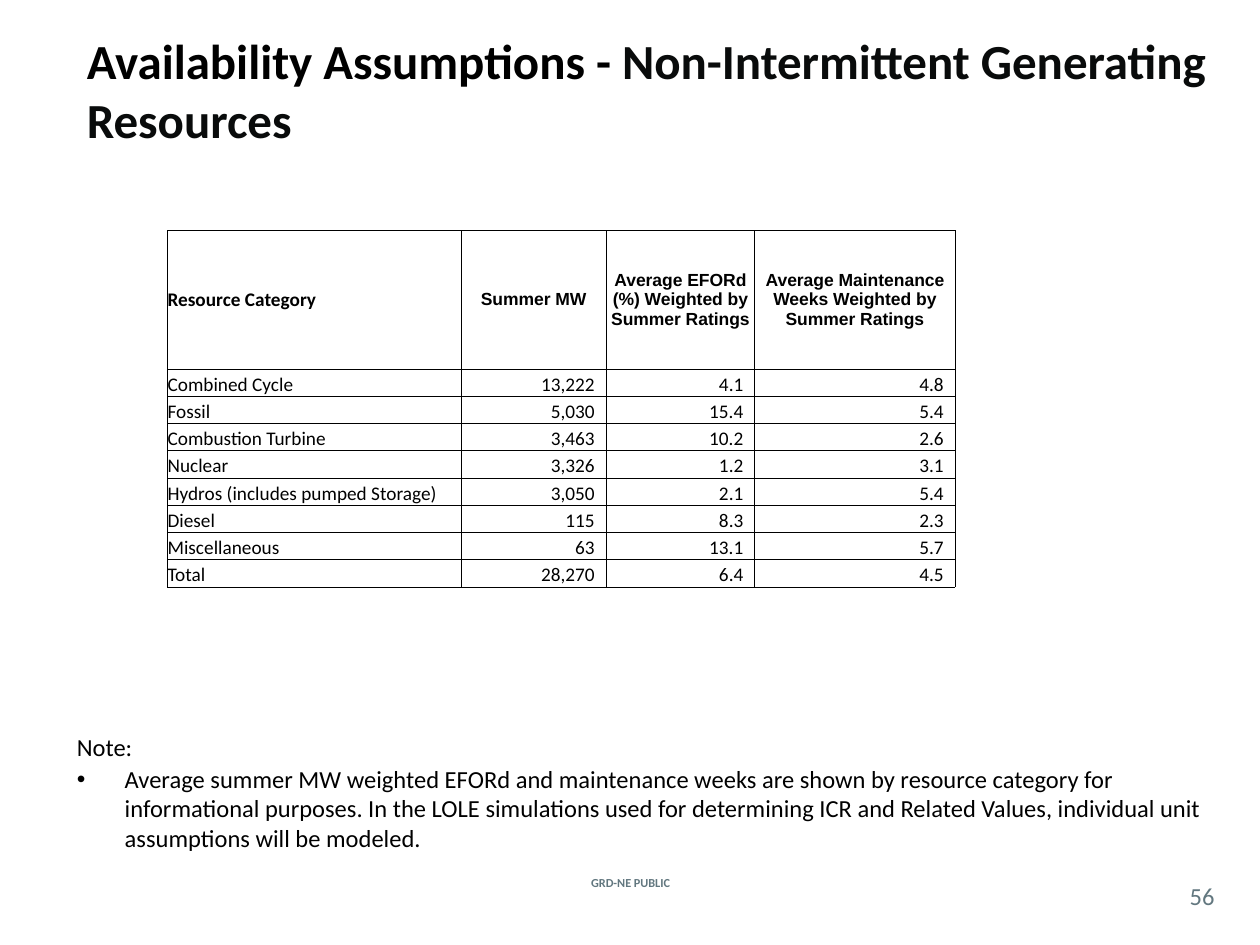
from lxml import etree
from pptx import Presentation
from pptx import util as u
from pptx.dml.color import RGBColor
from pptx.enum import text
from pptx.oxml import ns

BLACK = RGBColor(0x00, 0x00, 0x00)
INK = RGBColor(0x09, 0x0B, 0x0B)
SLATE = RGBColor(0x62, 0x77, 0x7F)

# Grid of 100 columns by 75 rows; every cell is a square.
COLUMNS, ROWS = 100, 75
WIDTH, HEIGHT = u.Inches(10), u.Inches(7.5)
UNIT = WIDTH / COLUMNS

LEFT, CENTER, RIGHT = text.PP_ALIGN.LEFT, text.PP_ALIGN.CENTER, text.PP_ALIGN.RIGHT
TOP, MIDDLE, BOTTOM = (text.MSO_ANCHOR.TOP, text.MSO_ANCHOR.MIDDLE,
                       text.MSO_ANCHOR.BOTTOM)

HEADINGS = ["Resource Category", "Summer MW",
            "Average EFORd (%) Weighted by Summer Ratings",
            "Average Maintenance Weeks Weighted by Summer Ratings"]
RESOURCES = [
    ["Combined Cycle", "13,222", "4.1", "4.8"],
    ["Fossil", "5,030", "15.4", "5.4"],
    ["Combustion Turbine", "3,463", "10.2", "2.6"],
    ["Nuclear", "3,326", "1.2", "3.1"],
    ["Hydros (includes pumped Storage)", "3,050", "2.1", "5.4"],
    ["Diesel", "115", "8.3", "2.3"],
    ["Miscellaneous", "63", "13.1", "5.7"],
    ["Total", "28,270", "6.4", "4.5"],
]
NOTE = ("Average summer MW weighted EFORd and maintenance weeks are shown by "
        "resource category for informational purposes. In the LOLE simulations "
        "used for determining ICR and Related Values, individual unit "
        "assumptions will be modeled.")


def grid(*counts):
    return [u.Emu(round(count * UNIT)) for count in counts]


def set_margins(holder, left, top, right, bottom):
    (holder.margin_left, holder.margin_top,
     holder.margin_right, holder.margin_bottom) = grid(left, top, right, bottom)


def add_span(para, words, size, color=BLACK, bold=False, font="Calibri"):
    span = para.add_run()
    span.text = words
    span.font.name = font
    span.font.size = u.Pt(size)
    span.font.bold = bold
    span.font.color.rgb = color


def add_frame(page, area, anchor, margins=(1, 0.5, 1, 0.5)):
    frame = page.shapes.add_textbox(*grid(*area)).text_frame
    frame.word_wrap = True
    frame.vertical_anchor = anchor
    set_margins(frame, *margins)
    return frame


def add_title(page, area):
    para = add_frame(page, area, MIDDLE).paragraphs[0]
    add_span(para, "Availability Assumptions - ", 28, bold=True)
    add_span(para, "Non-Intermittent Generating Resources", 28, INK, bold=True)


def add_label(page, area, words, size, bold=False):
    """Place one centred line of slate footer text."""
    para = add_frame(page, area, MIDDLE, (0, 0, 0, 0)).paragraphs[0]
    para.alignment = CENTER
    add_span(para, words, size, SLATE, bold)


def add_note(page, area):
    frame = add_frame(page, area, TOP, (1.1, 0.6, 1.1, 0.6))
    add_span(frame.paragraphs[0], "Note:", 14)
    para = frame.add_paragraph()
    para.space_before = u.Pt(1.4)
    indent, = grid(3.8)
    properties = para._p.get_or_add_pPr()
    properties.set("marL", str(indent))
    properties.set("indent", str(-indent))
    etree.SubElement(properties, ns.qn("a:buFont"), typeface="Arial")
    etree.SubElement(properties, ns.qn("a:buChar"), char="•")
    add_span(para, NOTE, 14)


def add_borders(cell, color=BLACK, width=u.Pt(0.5)):
    properties = cell._tc.get_or_add_tcPr()
    for position, side in enumerate(("lnL", "lnR", "lnT", "lnB")):
        line = etree.Element(ns.qn(f"a:{side}"), w=str(width))
        fill = etree.SubElement(line, ns.qn("a:solidFill"))
        etree.SubElement(fill, ns.qn("a:srgbClr"), val=str(color))
        properties.insert(position, line)


def fill_cell(cell, words, is_heading, is_first):
    cell.fill.background()
    add_borders(cell)
    cell.vertical_anchor = MIDDLE if is_heading else BOTTOM
    is_value = not (is_heading or is_first)
    set_margins(cell, 0, 0, 0.9 if is_value else 0, 0)
    para = cell.text_frame.paragraphs[0]
    para.alignment = LEFT if is_first else CENTER if is_heading else RIGHT
    if is_heading and not is_first:
        add_span(para, words, 10, bold=True, font="Arial")
    else:
        add_span(para, words, 11, bold=is_heading)


def add_resource_table(page, area, column_widths, heading_height):
    records = [HEADINGS] + RESOURCES
    table = page.shapes.add_table(len(records), len(HEADINGS), *grid(*area)).table
    table.first_row = table.horz_banding = False
    for column, width in zip(table.columns, grid(*column_widths)):
        column.width = width
    row_height = (area[3] - heading_height) / len(RESOURCES)
    heights = [heading_height] + [row_height] * len(RESOURCES)
    for row, height, record in zip(table.rows, grid(*heights), records):
        row.height = height
        for index, (cell, words) in enumerate(zip(row.cells, record)):
            fill_cell(cell, words, record is HEADINGS, index == 0)


def main():
    deck = Presentation()
    deck.slide_width, deck.slide_height = WIDTH, HEIGHT
    page = deck.slides.add_slide(deck.slide_layouts[6])
    add_label(page, (42.7, 69.2, 14.7, 1.7), "GRD-NE PUBLIC", 7, bold=True)
    add_title(page, (5.9, 0, COLUMNS - 5.9, 14.2))
    add_label(page, (93.3, 69.6, 4.2, 2.9), "56", 14)
    add_note(page, (5, 57.5, 92.5, 9.2))
    add_resource_table(page, (13.3, 18.3, 62.5, 28.3), (23.3, 11.5, 11.8, 15.9), 11)
    deck.save("out.pptx")


if __name__ == "__main__":
    main()
